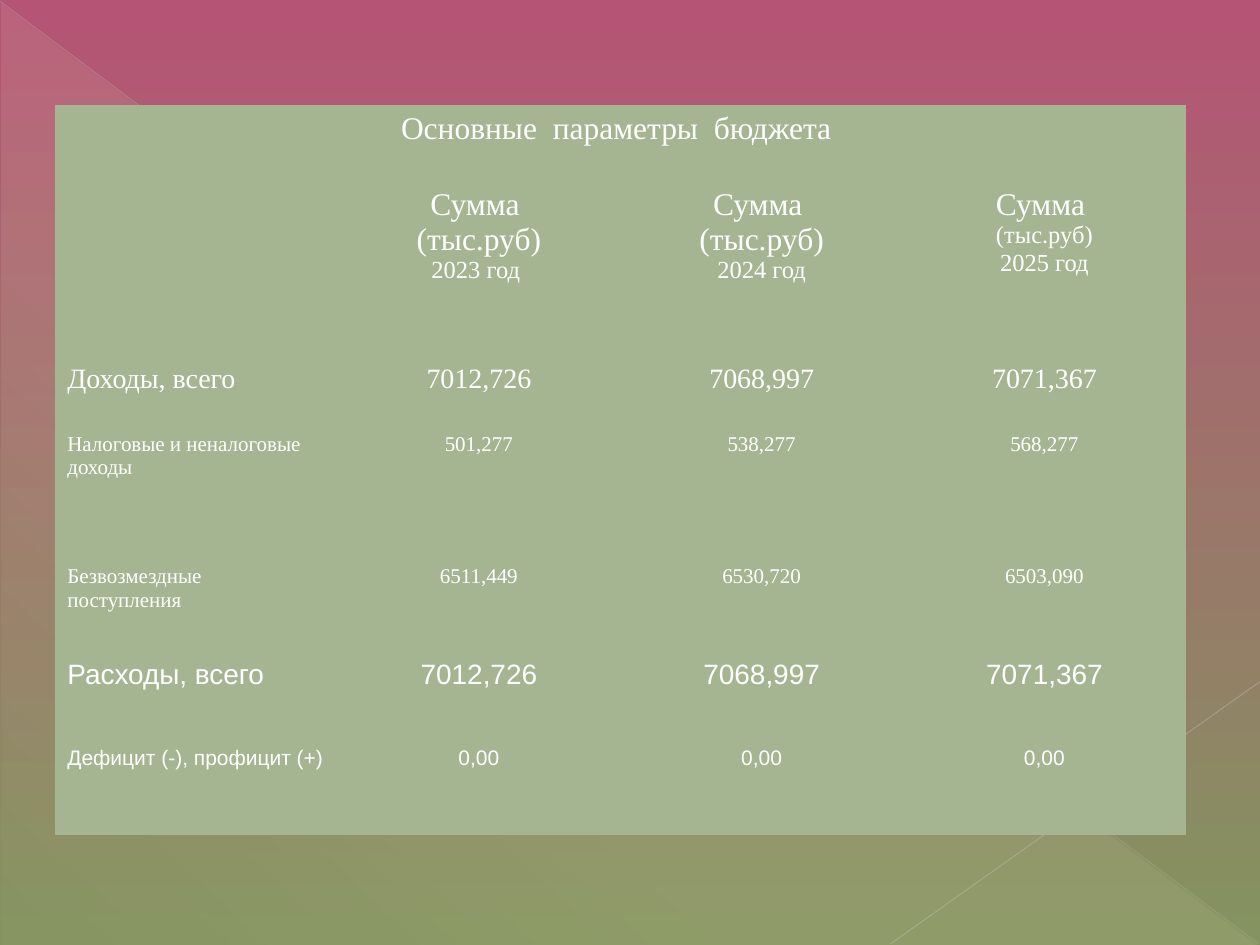
from lxml import etree
from pptx import Presentation
from pptx.dml.color import RGBColor
from pptx.enum.shapes import MSO_CONNECTOR, MSO_SHAPE
from pptx.enum.text import PP_ALIGN
from pptx.oxml.ns import qn
from pptx.util import Pt

LEFT, CENTER = PP_ALIGN.LEFT, PP_ALIGN.CENTER
TRIANGLE = MSO_SHAPE.RIGHT_TRIANGLE
STRAIGHT = MSO_CONNECTOR.STRAIGHT

ROSE = RGBColor(0xB5, 0x54, 0x75)
OLIVE = RGBColor(0x84, 0x93, 0x60)
CREAM = RGBColor(0xFE, 0xFA, 0xC9)
GREY = RGBColor(0xBA, 0xBD, 0xB3)
LIGHT_GREY = RGBColor(0xC1, 0xC4, 0xBC)
SAGE = RGBColor(0xA5, 0xB5, 0x92)
WHITE = RGBColor(0xFF, 0xFF, 0xFF)

SERIF, SANS = "Times New Roman", "Arial"
NO_STYLE_NO_GRID = "{2D5ABB26-0587-4C30-8999-92F81FD0307C}"

TITLE = "Основные  параметры  бюджета "
# Lines of each column heading with their sizes
HEADINGS = [
    [("Сумма ", 18), ("(тыс.руб)", 18), ("2023 год ", 14)],
    [("Сумма ", 18), ("(тыс.руб)", 18), ("2024 год", 14)],
    [("Сумма ", 18), ("(тыс.руб)", 14), ("2025 год", 14)],
]
# Font, size, label, values by year
BUDGET = [
    (SERIF, 16, "Доходы, всего", "7012,726", "7068,997", "7071,367"),
    (SERIF, 12, "Налоговые и неналоговые доходы", "501,277", "538,277", "568,277"),
    (SERIF, 12, "Безвозмездные  поступления", "6511,449", "6530,720", "6503,090"),
    (SANS, 16, "Расходы, всего", "7012,726", "7068,997", "7071,367"),
    (SANS, 12, "Дефицит (-), профицит (+)", "0,00", "0,00", "0,00"),
]
COL_WIDTHS = [161.6] * 4
ROW_HEIGHTS = [43.2, 100.8, 39.6, 75.6, 54, 49.7, 54]


def add_alpha(color_el, percent):
    etree.SubElement(color_el, qn("a:alpha"), val=str(percent * 1000))


class Deck:
    """Holds the presentation, the current slide and the shared style."""

    def __init__(self, width, height):
        self.prs = Presentation()
        self.prs.slide_width, self.prs.slide_height = Pt(width), Pt(height)
        self.s = None

    def slide(self):
        self.s = self.prs.slides.add_slide(self.prs.slide_layouts[6])

    def gradient(self, fill, element, angle, stops):
        """Fill with (position, colour, opacity) stops, angle clockwise."""
        fill.gradient()
        fill.gradient_angle = 360 - angle
        gs_list = element.find(".//" + qn("a:gsLst"))
        for gs in list(gs_list):
            gs_list.remove(gs)
        for pos, color, opacity in stops:
            gs = etree.SubElement(gs_list, qn("a:gs"), pos=str(pos * 1000))
            clr = etree.SubElement(gs, qn("a:srgbClr"), val=str(color))
            if opacity < 100:
                add_alpha(clr, opacity)

    def background(self, angle, stops):
        self.gradient(self.s.background.fill, self.s.element, angle, stops)

    def triangle(self, x, y, w, h, angle, stops):
        sp = self.s.shapes.add_shape(TRIANGLE, Pt(x), Pt(y), Pt(w), Pt(h))
        sp.shadow.inherit = False
        sp.line.fill.background()
        self.gradient(sp.fill, sp.element, angle, stops)

    def line(self, x1, y1, x2, y2, color, width, opacity):
        c = self.s.shapes.add_connector(STRAIGHT, Pt(x1), Pt(y1), Pt(x2), Pt(y2))
        c.line.color.rgb = color
        c.line.width = Pt(width)
        add_alpha(c.element.find(".//" + qn("a:ln")).find(".//" + qn("a:srgbClr")), opacity)
        etree.SubElement(c.element.spPr, qn("a:effectLst"))

    def table(self, x, y, widths, heights):
        frame = self.s.shapes.add_table(len(heights), len(widths), Pt(x), Pt(y),
                                        Pt(sum(widths)), Pt(sum(heights)))
        frame.element.find(".//" + qn("a:tableStyleId")).text = NO_STYLE_NO_GRID
        table = frame.table
        for column, width in zip(table.columns, widths):
            column.width = Pt(width)
        for row, height in zip(table.rows, heights):
            row.height = Pt(height)
        for cell in table.iter_cells():
            cell.fill.solid()
            cell.fill.fore_color.rgb = SAGE
        return table

    def cell(self, cell, lines, font=SERIF, align=CENTER):
        """Write (text, size) lines, one paragraph each."""
        tf = cell.text_frame
        tf.text = "\n".join(text for text, _ in lines)
        for p, (_, size) in zip(tf.paragraphs, lines):
            p.alignment = align
            for r in p.runs:
                r.font.name = font
                r.font.size = Pt(size)
                r.font.color.rgb = WHITE


def main():
    deck = Deck(720, 540)
    deck.slide()
    deck.background(90, [(0, ROSE, 100), (100, OLIVE, 100)])
    deck.triangle(0.7, 1.4, 718.6, 538.6, 133,
                  [(0, CREAM, 10), (70, CREAM, 8), (100, CREAM, 1)])
    deck.line(0, 0.7, 719.3, 539.3, GREY, 0.39, 35)
    deck.line(720, 389.5, 509, 539.3, LIGHT_GREY, 0.47, 45)

    table = deck.table(31.3, 60.2, COL_WIDTHS, ROW_HEIGHTS)
    table.cell(0, 0).merge(table.cell(0, 3))
    deck.cell(table.cell(0, 0), [(TITLE, 18)])
    for col, lines in enumerate(HEADINGS, 1):
        deck.cell(table.cell(1, col), lines)
    for row, (font, size, *texts) in enumerate(BUDGET, 2):
        for col, text in enumerate(texts):
            align = CENTER if col else LEFT
            deck.cell(table.cell(row, col), [(text, size)], font, align)

    deck.prs.save("out.pptx")


if __name__ == "__main__":
    main()
